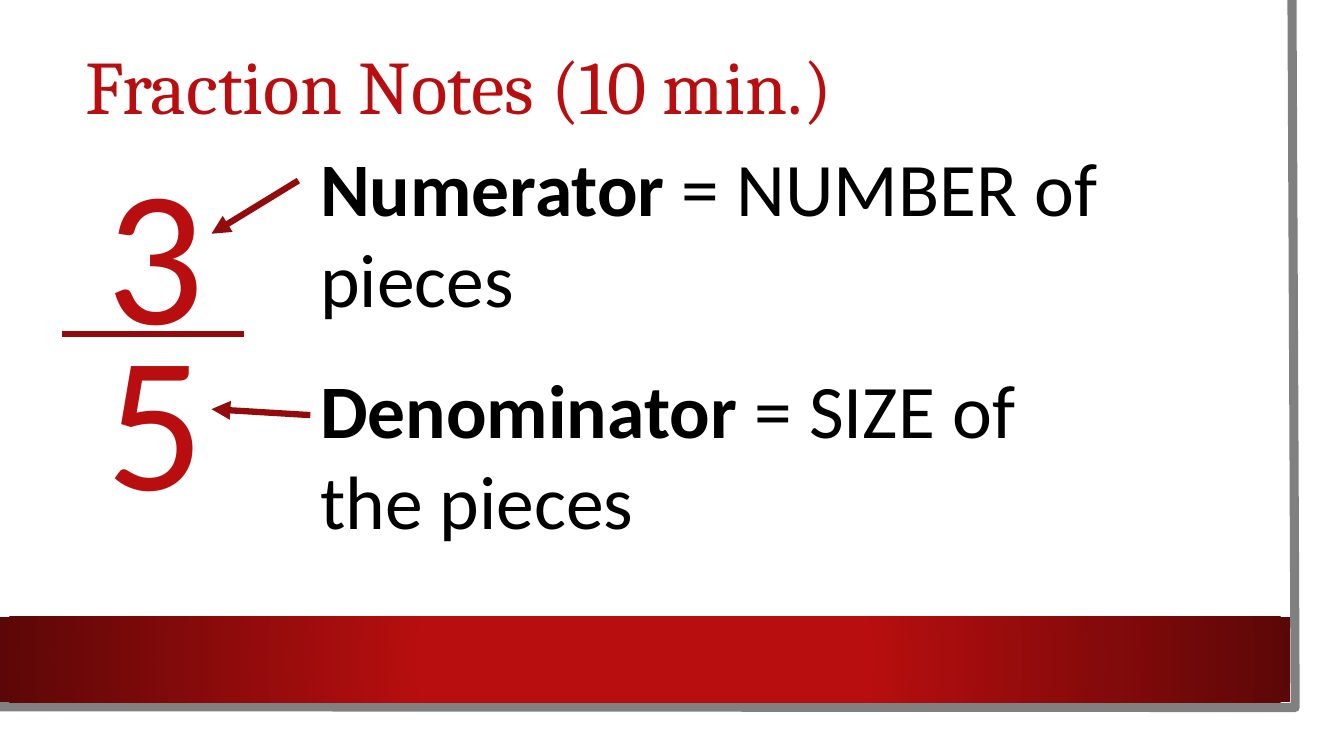
from dataclasses import dataclass

from lxml import etree
from pptx import Presentation
from pptx.dml.color import RGBColor
from pptx.enum.shapes import MSO_CONNECTOR, MSO_SHAPE
from pptx.enum.text import MSO_ANCHOR, PP_ALIGN
from pptx.oxml import parse_xml
from pptx.oxml.ns import nsdecls, qn
from pptx.util import Cm, Pt


@dataclass(frozen=True)
class Theme:
    red: str = "B80E0F"
    dark_red: str = "930B0C"
    deep_red: str = "5C0707"
    grey: str = "808080"
    white: str = "FFFFFF"
    black: str = "000000"
    title_font: str = "Cambria"
    body_font: str = "Calibri"
    text_size: int = 54
    digit_size: int = 138
    rule_width: float = 4.5
    edge_width: float = 6.5


THEME = Theme()

# Content (lengths in cm)
TITLE = "Fraction Notes (10 min.)"
DIGITS = [("3", 3.18), ("5", 7.37)]  # digit, top
DEFINITIONS = [  # bold term, plain meaning
    ("Numerator", " = NUMBER of pieces"),
    ("Denominator ", "= SIZE of the pieces"),
]
FRACTION_BAR = (1.57, 8.41, 6.15, 8.41)
ARROWS = [(7.52, 4.55, 5.33, 5.89), (7.82, 10.46, 5.33, 10.31)]
PAGE = (0, 0, 33.27, 18.47)
PAGE_EDGE = [(32.56, 0), (32.64, 17.83), (-0.08, 17.81)]
BAND = (0, 15.54, 32.51, 2.16)


def rgb(value):
    return RGBColor.from_string(value)


def cms(values):
    return [Cm(v) for v in values]


def add_rect(s, box):
    sp = s.shapes.add_shape(MSO_SHAPE.RECTANGLE, *cms(box))
    sp.shadow.inherit = False
    sp.line.fill.background()
    return sp


def add_text(s, box, wrap=True, anchor=MSO_ANCHOR.TOP):
    tf = s.shapes.add_textbox(*cms(box)).text_frame
    tf.word_wrap = wrap
    tf.vertical_anchor = anchor
    return tf


def style(p, font, size, colour):
    p.font.name = font
    p.font.size = Pt(size)
    p.font.color.rgb = rgb(colour)


def add_line(s, ends, arrow=False):
    line = s.shapes.add_connector(MSO_CONNECTOR.STRAIGHT, *cms(ends))
    line.line.color.rgb = rgb(THEME.dark_red)
    line.line.width = Pt(THEME.rule_width)
    if arrow:
        etree.SubElement(line.line._get_or_add_ln(), qn("a:tailEnd"), type="triangle")
    etree.SubElement(line._element.spPr, qn("a:effectLst"))


def fill_radial(sp, stops):
    sp.fill.background()
    gs = "".join(f'<a:gs pos="{pos * 1000}"><a:srgbClr val="{colour}"/></a:gs>'
                 for pos, colour in stops)
    grad = parse_xml(
        f'<a:gradFill {nsdecls("a")} rotWithShape="1"><a:gsLst>{gs}</a:gsLst>'
        '<a:path path="circle"><a:fillToRect l="50000" t="50000" r="50000" b="50000"/>'
        '</a:path></a:gradFill>')
    spPr = sp._element.spPr
    spPr.replace(spPr.find(qn("a:noFill")), grad)


def main():
    prs = Presentation()
    prs.slide_width, prs.slide_height = Cm(33.87), Cm(19.05)
    s = prs.slides.add_slide(prs.slide_layouts[6])

    # Page with its grey edge and red band
    page = add_rect(s, PAGE)
    page.fill.solid()
    page.fill.fore_color.rgb = rgb(THEME.white)

    start, *rest = [cms(point) for point in PAGE_EDGE]
    builder = s.shapes.build_freeform(*start)
    builder.add_line_segments(rest, close=False)
    edge = builder.convert_to_shape()
    edge.shadow.inherit = False
    edge.fill.background()
    edge.line.color.rgb = rgb(THEME.grey)
    edge.line.width = Pt(THEME.edge_width)

    fill_radial(add_rect(s, BAND), [(34, THEME.red), (100, THEME.deep_red)])

    # Title
    tf = add_text(s, (1.9, 0.66, 28.88, 3.2), anchor=MSO_ANCHOR.MIDDLE)
    p = tf.paragraphs[0]
    p.text = TITLE
    p.line_spacing = 0.9
    style(p, THEME.title_font, THEME.text_size, THEME.red)

    # Fraction
    for digit, top in DIGITS:
        p = add_text(s, (2.44, top, 2.87, 6.15), wrap=False).paragraphs[0]
        p.text = digit
        p.alignment = PP_ALIGN.CENTER
        style(p, THEME.body_font, THEME.digit_size, THEME.red)
    add_line(s, FRACTION_BAR)

    # Definitions
    tf = add_text(s, (7.82, 3.43, 20.47, 10.69))
    for i, (term, meaning) in enumerate(DEFINITIONS):
        p = tf.add_paragraph() if i else tf.paragraphs[0]
        if i:
            p.space_before = Pt(29)
        style(p, THEME.body_font, THEME.text_size, THEME.black)
        for text, bold in ((term, True), (meaning, False)):
            r = p.add_run()
            r.text = text
            r.font.bold = bold

    # Arrows from the definitions to the digits
    for ends in ARROWS:
        add_line(s, ends, arrow=True)

    prs.save("out.pptx")


if __name__ == "__main__":
    main()
